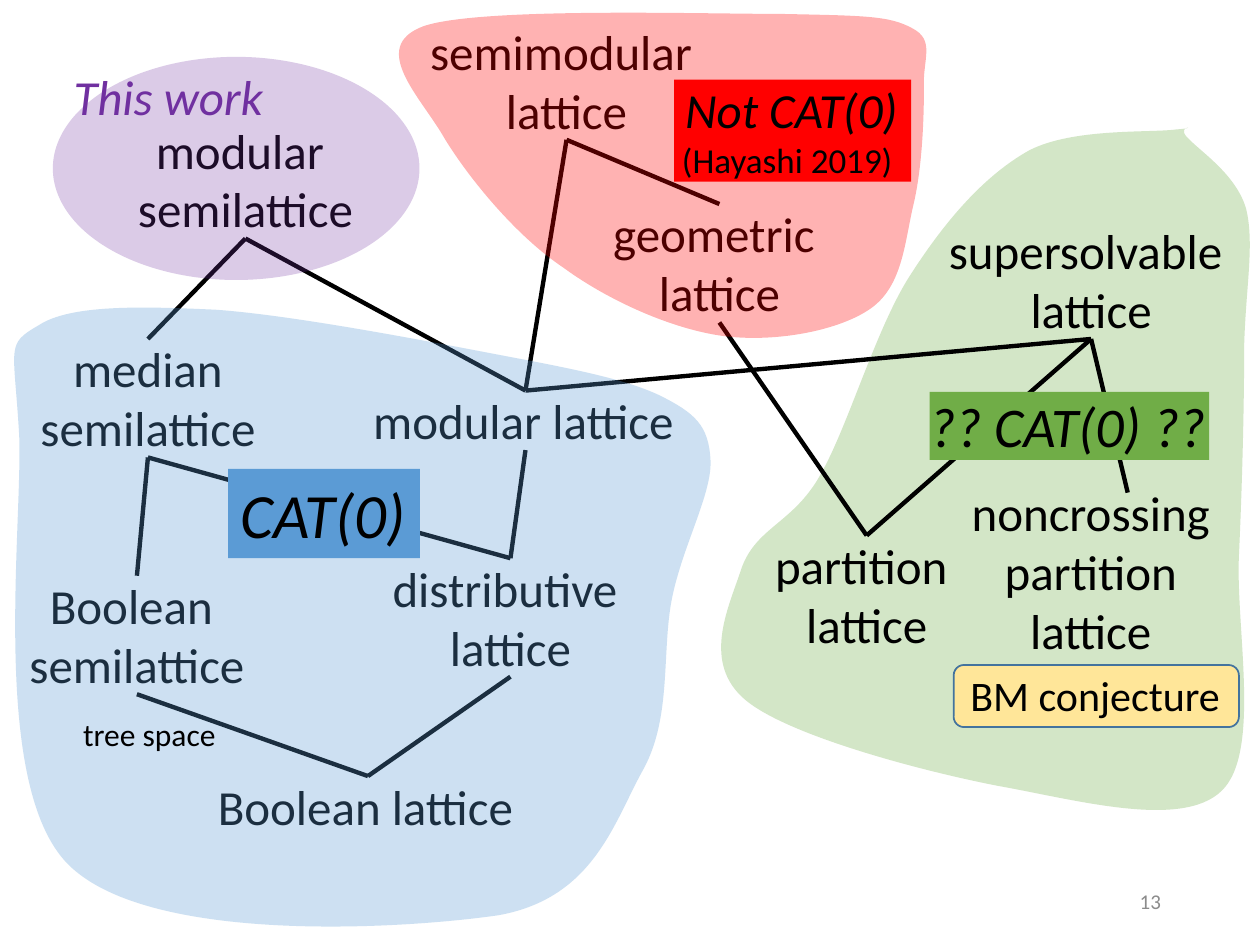
from dataclasses import dataclass

from lxml.etree import SubElement
from pptx import Presentation
from pptx.dml.color import RGBColor
from pptx.enum.shapes import MSO_CONNECTOR, MSO_SHAPE
from pptx.enum.text import MSO_ANCHOR, MSO_AUTO_SIZE, PP_ALIGN
from pptx.oxml.ns import qn
from pptx.util import Pt

TOP, BOTTOM = 0, 2


@dataclass
class Label:
    text: str
    left: float
    top: float
    width: float
    height: float
    size: float = 28
    color: str = "000000"
    fill: str | None = None
    italic: bool = False
    inset: tuple[float, float] = (0, 0)
    align: PP_ALIGN = PP_ALIGN.LEFT


@dataclass
class Region:
    """Closed outline: a start point, then cubic segments (x1, y1, x2, y2, x, y)."""
    color: str
    box: tuple[float, float, float, float]  # left, top, right, bottom
    start: tuple[float, float]
    curves: list[tuple[float, ...]]


GREEN_REGION = Region("70AD47", (412.5, 72.5, 715, 462), (672, 74), [
    (657, 76, 613, 73, 588, 86), (563, 100, 541, 125, 521, 156),
    (501, 186, 485, 243, 469, 271), (453, 300, 431, 301, 423, 327),
    (416, 348, 401, 379, 426, 400), (450, 420, 524, 440, 570, 449),
    (615, 457, 675, 474, 698, 452), (721, 430, 706, 359, 708, 317),
    (710, 274, 711, 230, 711, 197), (712, 163, 717, 139, 712, 119),
    (706, 99, 685, 86, 678, 78), (672, 71, 687, 73, 672, 74),
])
BLUE_REGION = Region("5B9BD5", (8, 176, 406, 530), (22, 186), [
    (40, 174, 80, 175, 123, 177), (166, 180, 239, 194, 281, 202),
    (323, 210, 356, 216, 377, 226), (397, 236, 405, 243, 406, 263),
    (407, 282, 390, 312, 384, 342), (378, 372, 384, 409, 368, 439),
    (351, 469, 340, 513, 285, 523), (230, 531, 85, 540, 39, 494),
    (-6, 449, 13, 301, 11, 249), (8, 197, 3, 197, 22, 186),
])
RED_REGION = Region("FF0000", (227.5, 7, 529, 193), (242, 15), [
    (210, 27, 241, 56, 254, 79), (268, 102, 295, 135, 322, 153),
    (348, 172, 384, 188, 413, 192), (443, 196, 480, 189, 498, 176),
    (516, 163, 517, 138, 522, 117), (527, 96, 528, 68, 528, 51),
    (527, 34, 535, 23, 521, 16), (508, 9, 494, 9, 447, 8),
    (400, 8, 274, 4, 242, 15),
])

CENTER = PP_ALIGN.CENTER
NODES = {
    "boolean": Label("Boolean lattice", 124.5, 443.5, 171.5, 34),
    "distributive": Label("distributive \nlattice", 223.2, 319, 137, 67.7, align=CENTER),
    "boolean_semi": Label("Boolean \nsemilattice", 16, 329, 124.5, 67.7, align=CENTER),
    "median": Label("median\nsemilattice", 22.3, 193.7, 124.5, 67.7, align=CENTER),
    "modular": Label("modular lattice", 213.3, 223.2, 174, 34),
    "supersolvable": Label("supersolvable \nlattice", 541.5, 126, 164, 67.7, align=CENTER),
    "semimodular": Label("semimodular \nlattice", 245, 12.2, 157.5, 67.7, align=CENTER),
    "geometric": Label("geometric \nlattice", 349.9, 116.6, 122.4, 67.7, align=CENTER),
    "partition": Label("partition \nlattice", 442, 306, 106.5, 67.7, align=CENTER),
    "noncrossing": Label("noncrossing\npartition\nlattice", 554.5, 275.8, 137.5, 101.5,
                         align=CENTER),
    "modular_semi": Label("modular \nsemilattice", 78, 68.6, 124.5, 67.7,
                          fill="FFFFFF", align=CENTER),
}
EDGES = [
    ("modular_semi", "modular"), ("modular_semi", "median"),
    ("modular", "distributive"), ("median", "boolean_semi"),
    ("median", "distributive"), ("boolean_semi", "boolean"),
    ("distributive", "boolean"), ("semimodular", "modular"),
    ("semimodular", "geometric"), ("supersolvable", "modular"),
    ("geometric", "partition"), ("supersolvable", "partition"),
]
NONCROSSING_EDGE_END = (644.4, 281.5)

NOT_CAT = Label(" Not CAT(0)\n (Hayashi 2019)", 385.2, 45.5, 135.4, 58.3,
                fill="FF0000", italic=True)
CAT = Label("CAT(0)", 130.4, 267.9, 109.5, 51, 36, fill="5B9BD5", italic=True,
            inset=(7.2, 3.6))
MAYBE_CAT = Label("?? CAT(0) ??", 531.2, 224, 159.8, 38.9, 32, fill="70AD47", italic=True)
PAGE_NUMBER = Label("13", 508.5, 500.5, 162, 29, 12, "8C8C8C", inset=(7.2, 3.6),
                    align=PP_ALIGN.RIGHT)
CONJECTURE = Label("BM conjecture", 554.5, 382.5, 144, 29, 24)
THIS_WORK = Label("This work", 42, 38, 109.5, 34, color="7030A0", italic=True)
TREE_SPACE = Label("tree space", 47.5, 408.4, 76.5, 21.6, 18)


def rgb(color: str) -> RGBColor:
    return RGBColor.from_string(color)


def paint(shape, color: str, opacity: int = 100) -> None:
    """Give a shape a solid fill with no outline and no shadow."""
    shape.shadow.inherit = False
    shape.fill.solid()
    shape.fill.fore_color.rgb = rgb(color)
    shape.line.fill.background()
    if opacity < 100:
        fill_color = shape._element.spPr.find(qn("a:solidFill")).find(qn("a:srgbClr"))
        SubElement(fill_color, qn("a:alpha"), val=str(opacity * 1000))


def add_label(slide, label: Label):
    shape = slide.shapes.add_textbox(Pt(label.left), Pt(label.top),
                                     Pt(label.width), Pt(label.height))
    if label.fill:
        paint(shape, label.fill)
    frame = shape.text_frame
    frame.text = label.text
    frame.word_wrap = False
    frame.auto_size = MSO_AUTO_SIZE.SHAPE_TO_FIT_TEXT
    frame.margin_left = frame.margin_right = Pt(label.inset[0])
    frame.margin_top = frame.margin_bottom = Pt(label.inset[1])
    for paragraph in frame.paragraphs:
        paragraph.alignment = label.align
        font = paragraph.font
        font.name = "Calibri"
        font.size = Pt(label.size)
        font.italic = label.italic
        font.color.rgb = rgb(label.color)
    return shape


def add_region(slide, region: Region) -> None:
    """Span the box with a freeform, then give it the curved outline."""
    left, top, right, bottom = region.box
    builder = slide.shapes.build_freeform(Pt(left), Pt(top))
    builder.add_line_segments([(Pt(right), Pt(bottom))], close=True)
    shape = builder.convert_to_shape()
    outline = next(shape._element.iter(qn("a:path")))
    for command in list(outline):
        outline.remove(command)

    def add_command(name: str, values: tuple[float, ...]) -> None:
        command = SubElement(outline, qn(name))
        for x, y in zip(values[::2], values[1::2]):
            SubElement(command, qn("a:pt"), x=str(Pt(x - left)), y=str(Pt(y - top)))

    add_command("a:moveTo", region.start)
    for curve in region.curves:
        add_command("a:cubicBezTo", curve)
    add_command("a:close", ())
    paint(shape, region.color, 30)


def add_edge(slide, upper, lower=None, end: tuple[float, float] = (0, 0)) -> None:
    """Join the bottom of upper to the top of lower, or to a free end point."""
    edge = slide.shapes.add_connector(MSO_CONNECTOR.STRAIGHT, 0, 0, Pt(end[0]), Pt(end[1]))
    edge.begin_connect(upper, BOTTOM)
    if lower is not None:
        edge.end_connect(lower, TOP)
    edge.line.width = Pt(2.5)
    edge.line.color.rgb = rgb("000000")
    SubElement(edge._element.spPr, qn("a:effectLst"))


def main() -> None:
    presentation = Presentation()
    presentation.slide_width, presentation.slide_height = Pt(720), Pt(540)
    slide = presentation.slides.add_slide(presentation.slide_layouts[6])

    add_region(slide, GREEN_REGION)
    nodes = {name: add_label(slide, label) for name, label in NODES.items()}
    for upper, lower in EDGES:
        add_edge(slide, nodes[upper], nodes[lower])
    add_edge(slide, nodes["supersolvable"], end=NONCROSSING_EDGE_END)
    add_region(slide, BLUE_REGION)
    add_region(slide, RED_REGION)

    citation = add_label(slide, NOT_CAT).text_frame.paragraphs[1]
    citation.font.size = Pt(20)
    citation.font.italic = False
    add_label(slide, CAT)
    add_label(slide, MAYBE_CAT)
    page_frame = add_label(slide, PAGE_NUMBER).text_frame
    page_frame.auto_size = MSO_AUTO_SIZE.NONE
    page_frame.word_wrap = True
    page_frame.vertical_anchor = MSO_ANCHOR.MIDDLE

    plate = slide.shapes.add_shape(MSO_SHAPE.ROUNDED_RECTANGLE, Pt(545), Pt(380),
                                   Pt(163), Pt(35.5))
    paint(plate, "FFE699")
    plate.line.color.rgb = rgb("43739E")
    plate.line.width = Pt(1)
    add_label(slide, CONJECTURE)
    add_label(slide, THIS_WORK)
    paint(slide.shapes.add_shape(MSO_SHAPE.OVAL, Pt(30.2), Pt(32.5), Pt(209.5), Pt(127.5)),
          "7030A0", 25)
    add_label(slide, TREE_SPACE)
    presentation.save("out.pptx")


if __name__ == "__main__":
    main()
